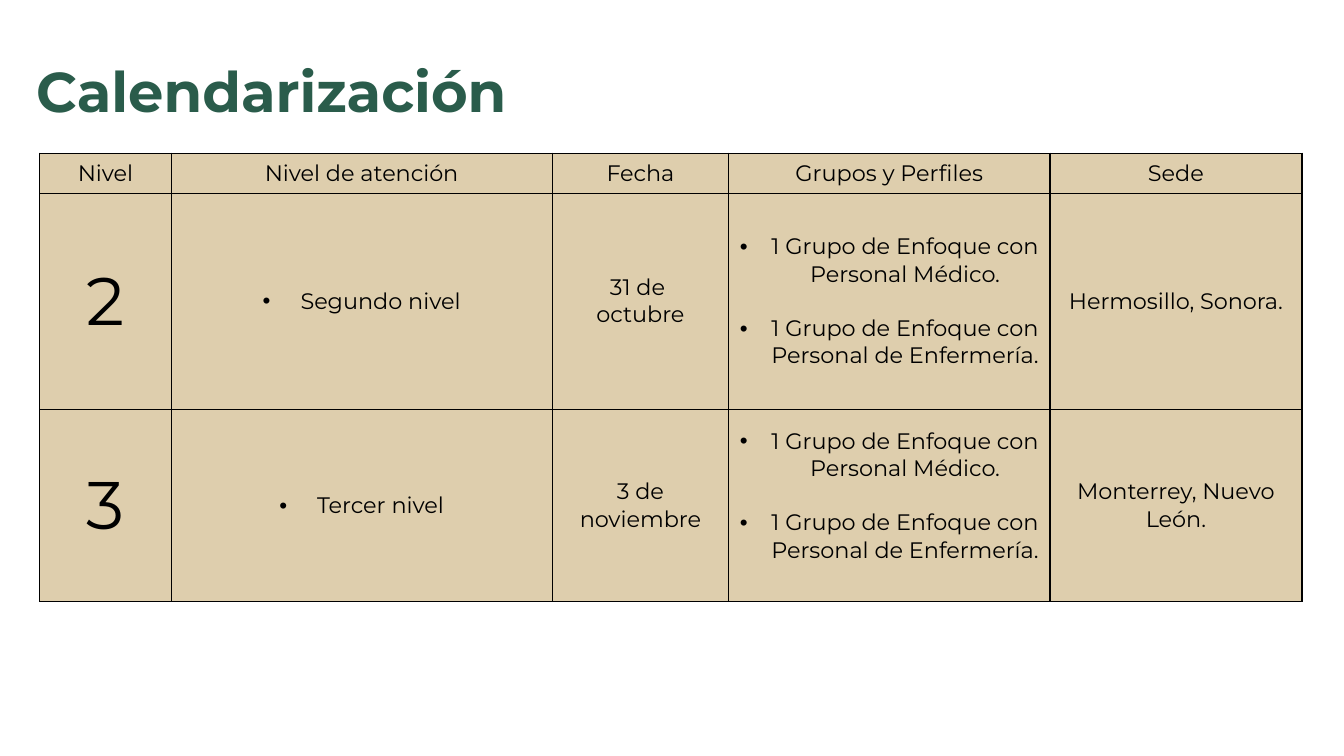
"""Build the calendar slide with its table of levels, dates and venues."""
from dataclasses import dataclass

from lxml import etree
from pptx import Presentation
from pptx.dml.color import RGBColor
from pptx.enum.text import MSO_ANCHOR, PP_ALIGN
from pptx.oxml.ns import qn
from pptx.util import Emu, Pt

LEFT, CENTER = PP_ALIGN.LEFT, PP_ALIGN.CENTER
MIDDLE = MSO_ANCHOR.MIDDLE
SCALE = 9525


@dataclass(frozen=True)
class Theme:
    font: str = "Montserrat"
    green: str = "2A5C4B"
    sand: str = "DECEAD"
    black: str = "000000"
    title: int = 40
    level: int = 48
    body: int = 16
    gap: float = 19.5
    line: int = 1


THEME = Theme()
COLS = [125, 363, 168, 306, 240]
ROWS = [38, 206, 183]
HEADS = ["Nivel", "Nivel de atención", "Fecha", "Grupos y Perfiles", "Sede"]
GROUPS = ["1 Grupo de Enfoque con Personal Médico.",
          "1 Grupo de Enfoque con Personal de Enfermería."]
VISITS = [
    ("2", "Segundo nivel", ["31 de ", "octubre"], "Hermosillo, Sonora.", 5),
    ("3", "Tercer nivel", ["3 de noviembre"], "Monterrey, Nuevo León.", 24),
]


def px(size):
    return Emu(size * SCALE)


def bullet(para, indent):
    props = para._p.get_or_add_pPr()
    props.set("marL", str(px(indent)))
    props.set("indent", str(-px(indent)))
    etree.SubElement(props, qn("a:buFont")).set("typeface", "Arial")
    etree.SubElement(props, qn("a:buChar")).set("char", "•")


def write(frame, lines, size=THEME.body, color=THEME.black, bold=False,
          align=CENTER, indent=0, gap=0, spacing=None):
    frame.word_wrap = True
    for i, line in enumerate(lines):
        para = frame.add_paragraph() if i else frame.paragraphs[0]
        para.alignment = align
        if spacing:
            para.line_spacing = spacing
        if i and gap:
            para.space_before = Pt(gap)
        if indent:
            bullet(para, indent)
        run = para.add_run()
        run.text = line
        font = run.font
        font.name, font.size, font.bold = THEME.font, Pt(size), bold
        font.color.rgb = RGBColor.from_string(color)


def border(cell):
    props = cell._tc.get_or_add_tcPr()
    for i, side in enumerate(("lnL", "lnR", "lnT", "lnB")):
        line = etree.Element(qn(f"a:{side}"), w=str(Pt(THEME.line)))
        fill = etree.SubElement(line, qn("a:solidFill"))
        etree.SubElement(fill, qn("a:srgbClr")).set("val", THEME.black)
        props.insert(i, line)


def fill_cell(cell, lines, bottom=5, **style):
    cell.vertical_anchor = MIDDLE
    cell.margin_bottom = px(bottom)
    cell.fill.solid()
    cell.fill.fore_color.rgb = RGBColor.from_string(THEME.sand)
    border(cell)
    write(cell.text_frame, lines, **style)


def add_title(slide, words):
    box = slide.shapes.add_textbox(px(25), px(59), px(1104), px(62))
    box.text_frame.vertical_anchor = MIDDLE
    write(box.text_frame, [words], size=THEME.title, color=THEME.green,
          bold=True, align=LEFT, spacing=0.9)


def add_grid(slide):
    table = slide.shapes.add_table(len(ROWS), len(COLS), px(38), px(146),
                                   px(sum(COLS)), px(sum(ROWS))).table
    table.first_row = table.horz_banding = False
    for col, width in zip(table.columns, COLS):
        col.width = px(width)
    for row, height in zip(table.rows, ROWS):
        row.height = px(height)
    return table


def main():
    deck = Presentation()
    deck.slide_width, deck.slide_height = px(1280), px(720)
    slide = deck.slides.add_slide(deck.slide_layouts[6])
    add_title(slide, "Calendarización")
    table = add_grid(slide)
    for col, head in enumerate(HEADS):
        fill_cell(table.cell(0, col), [head])
    for row, (level, care, date, place, bottom) in enumerate(VISITS, 1):
        fill_cell(table.cell(row, 0), [level], size=THEME.level)
        fill_cell(table.cell(row, 1), [care], indent=36)
        fill_cell(table.cell(row, 2), date)
        fill_cell(table.cell(row, 3), GROUPS, bottom=bottom, indent=30,
                  gap=THEME.gap)
        fill_cell(table.cell(row, 4), [place])
    deck.save("out.pptx")


if __name__ == "__main__":
    main()
